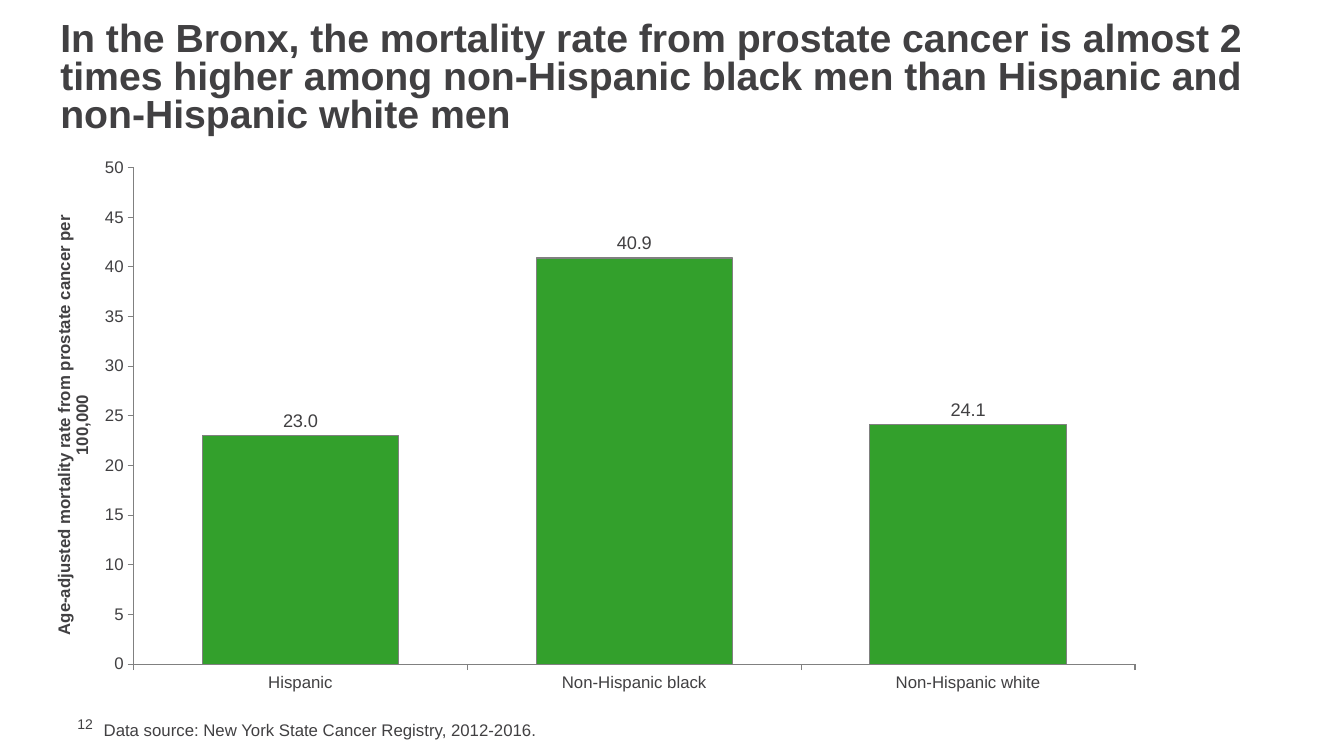
"""Build a slide on prostate cancer mortality in the Bronx."""
from lxml.etree import SubElement
from pptx import Presentation
from pptx.chart.data import CategoryChartData
from pptx.dml.color import RGBColor
from pptx.enum.chart import XL_CHART_TYPE as Kind, XL_LABEL_POSITION as Pos, XL_TICK_MARK as Tick
from pptx.enum.text import MSO_ANCHOR as Anchor
from pptx.oxml.ns import qn
from pptx.util import Inches, Pt

HEX = {"text": "414042", "bar": "33A02C", "line": "808080"}
FACE = "Arial"
TITLE = ("In the Bronx, the mortality rate from prostate cancer is almost 2 times "
         "higher among non-Hispanic black men than Hispanic and non-Hispanic white men")
AXIS = "Age-adjusted mortality rate from prostate cancer per 100,000"
RATES = {"Hispanic": 23, "Non-Hispanic black": 40.9, "Non-Hispanic white": 24.1}
PLOT = {"x": 0.075, "y": 0.044, "w": 0.903, "h": 0.889}
SIDE = (0.1, 0.05, 0.1, 0.05)
TEXTS = [
    ("12", (0.67, 7.1, 0.43, 0.17), 10, False, Anchor.MIDDLE, 1, (0.1, 0, 0, 0)),
    (TITLE, (0.5, 0.17, 12.25, 1.23), 28, True, Anchor.MIDDLE, 0.8, SIDE),
    ("Data source: New York State Cancer Registry, 2012-2016.",
     (0.93, 7.09, 9.92, 0.3), 12, False, Anchor.TOP, 1, SIDE),
]
AREA = (0.5, 1.42, 11, 5.54)


def tint(name):
    return RGBColor.from_string(HEX[name])


def style(font, size, bold=False):
    font.name, font.size, font.bold = FACE, Pt(size), bold
    font.color.rgb = tint("text")


def rule(line):
    line.color.rgb = tint("line")
    line.width = Pt(0.75)


def write(slide, text, box, size, bold, anchor, space, inset):
    frame = slide.shapes.add_textbox(*map(Inches, box)).text_frame
    frame.word_wrap = True
    frame.vertical_anchor = anchor
    (frame.margin_left, frame.margin_top,
     frame.margin_right, frame.margin_bottom) = map(Inches, inset)
    par = frame.paragraphs[0]
    par.text = text
    par.line_spacing = space
    style(par.font, size, bold)


def place(chart):
    area = chart.element.find(".//" + qn("c:plotArea"))
    box = area.find(qn("c:layout"))
    if box is None:
        box = SubElement(area, qn("c:layout"))
        area.insert(0, box)
    inner = SubElement(box, qn("c:manualLayout"))
    rows = [("layoutTarget", "inner"), ("xMode", "edge"), ("yMode", "edge")]
    for tag, val in rows + list(PLOT.items()):
        SubElement(inner, qn("c:" + tag)).set("val", str(val))


def draw(slide):
    data = CategoryChartData()
    data.categories = list(RATES)
    data.add_series("Series 1", list(RATES.values()))
    chart = slide.shapes.add_chart(Kind.COLUMN_CLUSTERED, *map(Inches, AREA), data).chart
    chart.has_legend = chart.has_title = False
    style(chart.font, 10)
    for axis in (chart.category_axis, chart.value_axis):
        axis.has_major_gridlines = False
        axis.major_tick_mark, axis.minor_tick_mark = Tick.OUTSIDE, Tick.NONE
        style(axis.tick_labels.font, 12)
        rule(axis.format.line)
    axis = chart.value_axis
    axis.minimum_scale, axis.maximum_scale, axis.major_unit = 0, 50, 5
    axis.tick_labels.number_format = "0"
    axis.tick_labels.number_format_is_linked = False
    par = axis.axis_title.text_frame.paragraphs[0]
    par.text = AXIS
    style(par.font, 12, True)
    plot = chart.plots[0]
    plot.gap_width, plot.vary_by_categories = 70, False
    bars = plot.series[0]
    bars.format.fill.solid()
    bars.format.fill.fore_color.rgb = tint("bar")
    rule(bars.format.line)
    tags = bars.data_labels
    tags.show_value, tags.position = True, Pos.OUTSIDE_END
    tags.number_format, tags.number_format_is_linked = "#,##0.0", False
    style(tags.font, 13)
    place(chart)


def main():
    deck = Presentation()
    deck.slide_width, deck.slide_height = Inches(13.33), Inches(7.5)
    slide = deck.slides.add_slide(deck.slide_layouts[6])
    draw(slide)
    for item in TEXTS:
        write(slide, *item)
    deck.save("out.pptx")


if __name__ == "__main__":
    main()
